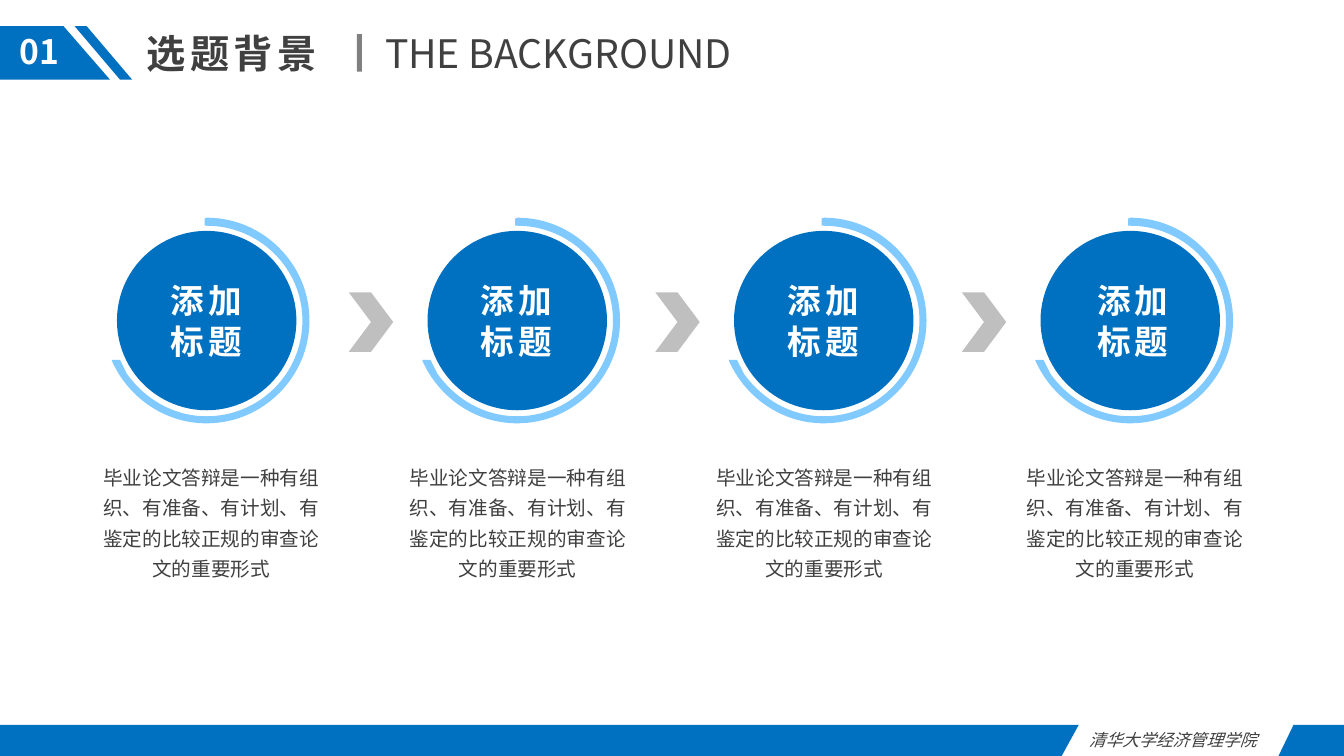
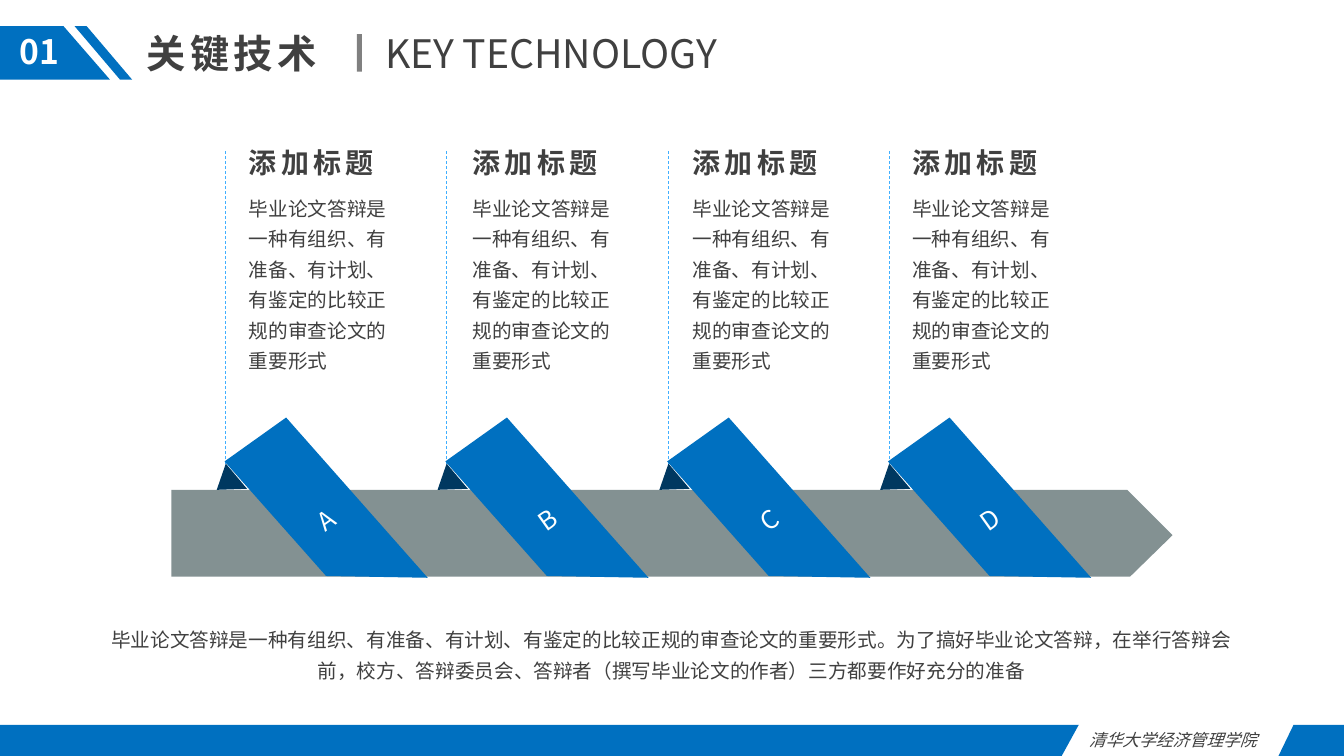
from pptx import Presentation
from pptx.dml.color import RGBColor
from pptx.enum.dml import MSO_LINE
from pptx.enum.shapes import MSO_CONNECTOR, MSO_SHAPE
from pptx.enum.text import MSO_ANCHOR, MSO_AUTO_SIZE, PP_ALIGN
from pptx.oxml.ns import qn
from pptx.util import Emu, Pt

EMU_PER_PX = 9144
WIDTH, HEIGHT = 1333, 750
HEADING_FONT = "Noto Sans CJK SC"
BODY_FONT = "Arial"
COLORS = {
    "blue": "0070C0",
    "navy": "003860",
    "sky": "80CAFF",
    "guide": "40AFFF",
    "text": "404040",
    "divider": "808080",
    "chevron": "BFBFBF",
    "arrow": "839192",
    "white": "FFFFFF",
    "letter": "FEFFFF",
}
RING = [
    (94, 0),
    (150, 0, 196, 46, 196, 102),
    (196, 158, 150, 204, 94, 204),
    (52, 204, 16, 178, 0, 142),
    (0, 141),
    (8, 141),
    (15, 155),
    (33, 180, 61, 197, 94, 197),
    (146, 197, 189, 155, 189, 102),
    (189, 50, 146, 8, 94, 8),
    (92, 8),
    (92, 1),
]
SUMMARY = "毕业论文答辩是一种有组织、有准备、有计划、有鉴定的比较正规的审查论文的重要形式"
CONCLUSION = SUMMARY + "。为了搞好毕业论文答辩，在举行答辩会前，校方、答辩委员会、答辩者（撰写毕业论文的作者）三方都要作好充分的准备"


def px(value):
    return Emu(round(value * EMU_PER_PX))


def rgb(name):
    return RGBColor.from_string(COLORS[name])


def paint(sp, color):
    sp.shadow.inherit = False
    sp.fill.solid()
    sp.fill.fore_color.rgb = rgb(color)
    sp.line.fill.background()
    return sp


def add_preset(slide, kind, x, y, w, h, color):
    sp = slide.shapes.add_shape(kind, px(x), px(y), px(w), px(h))
    return paint(sp, color)


def bend(sp, segments):
    lines = iter(list(sp._element.iter(qn("a:lnTo"))))
    for segment in segments:
        first = next(lines)
        if len(segment) == 6:
            curve = first.makeelement(qn("a:cubicBezTo"), {})
            first.addprevious(curve)
            for line in (first, next(lines), next(lines)):
                curve.append(line[0])
                line.getparent().remove(line)


def add_outline(slide, segments, color, dx=0, dy=0):
    corners = [(px(s[i] + dx), px(s[i + 1] + dy)) for s in segments for i in range(0, len(s), 2)]
    builder = slide.shapes.build_freeform(*corners[0])
    builder.add_line_segments(corners[1:], close=True)
    sp = builder.convert_to_shape()
    bend(sp, segments[1:])
    return paint(sp, color)


def add_run(p, text, size, color="text", font=HEADING_FONT, bold=False, italic=False, spacing=0):
    r = p.add_run()
    r.text = text
    r.font.size = Pt(size)
    r.font.bold = bold
    r.font.italic = italic
    r.font.color.rgb = rgb(color)
    r.font.name = font
    rPr = r.font._element
    ea = rPr.makeelement(qn("a:ea"), {"typeface": HEADING_FONT})
    rPr.find(qn("a:latin")).addnext(ea)
    if spacing:
        rPr.set("spc", str(spacing * 100))


def add_text(slide, x, y, w, h, lines, size, align=PP_ALIGN.LEFT, wrap=True, line_spacing=None, **style):
    tf = slide.shapes.add_textbox(px(x), px(y), px(w), px(h)).text_frame
    tf.word_wrap = wrap
    tf.auto_size = MSO_AUTO_SIZE.SHAPE_TO_FIT_TEXT
    for i, line in enumerate(lines):
        p = tf.add_paragraph() if i else tf.paragraphs[0]
        p.alignment = align
        if line_spacing:
            p.line_spacing = line_spacing
        add_run(p, line, size, **style)


def add_body(slide, x, y, w, h, text, align=PP_ALIGN.LEFT):
    add_text(slide, x, y, w, h, [text], 14, align, line_spacing=1.3, font=BODY_FONT)


def add_guide(slide, x, y1, y2):
    line = slide.shapes.add_connector(MSO_CONNECTOR.STRAIGHT, px(x), px(y1), px(x), px(y2))
    line.line.color.rgb = rgb("guide")
    line.line.width = Pt(0.5)
    line.line.dash_style = MSO_LINE.DASH
    spPr = line._element.spPr
    spPr.append(spPr.makeelement(qn("a:effectLst"), {}))


def add_header(slide, number, title, subtitle, subtitle_width):
    add_text(slide, 136, 24, 196, 57, [title], 28, bold=True, spacing=3)
    add_preset(slide, MSO_SHAPE.RECTANGLE, 354, 34, 5, 37, "divider")
    add_text(slide, 372, 24, subtitle_width, 57, [subtitle], 28, wrap=False)
    add_outline(slide, [(0, 26), (63, 26), (109, 79), (0, 79)], "blue")
    add_outline(slide, [(74, 26), (86, 26), (131, 79), (119, 79)], "blue")
    add_text(slide, 0, 26, 78, 50, [number], 24, PP_ALIGN.CENTER, color="white", bold=True)


def add_footer(slide):
    add_outline(slide, [(0, 719), (1070, 719), (1053, HEIGHT), (0, HEIGHT)], "blue")
    add_text(slide, 1070, 719, 198, 30, ["清华大学经济管理学院"], 12, PP_ALIGN.JUSTIFY, italic=True)
    add_outline(slide, [(1283, 719), (WIDTH, 719), (WIDTH, HEIGHT), (1268, HEIGHT)], "blue")


def add_slide(prs, *header):
    slide = prs.slides.add_slide(prs.slide_layouts[6])
    add_header(slide, *header)
    add_footer(slide)
    return slide


def add_step(slide, circle_x, label_x, body_x):
    add_outline(slide, RING, "sky", circle_x - 5, 216)
    add_preset(slide, MSO_SHAPE.OVAL, circle_x, 229, 178, 178, "blue")
    add_text(slide, label_x, 273, 103, 91, ["添加", "标题"], 24, PP_ALIGN.CENTER,
             color="white", bold=True, spacing=3)
    add_body(slide, body_x, 450, 235, 133, SUMMARY, PP_ALIGN.CENTER)


def add_ribbon(slide, letter, dx):
    add_outline(slide, [(215, 486), (224, 460), (245, 485)], "navy", dx)
    sp = add_outline(slide, [(350, 410), (372, 621), (291, 561), (275, 410)], "blue", dx)
    sp.rotation = 324.5
    tf = sp.text_frame
    tf.vertical_anchor = MSO_ANCHOR.MIDDLE
    p = tf.paragraphs[0]
    p.alignment = PP_ALIGN.CENTER
    add_run(p, letter, 18, color="letter")


def build_background(prs):
    slide = add_slide(prs, "01", "选题背景", "THE BACKGROUND", 385)
    for i in range(3):
        add_preset(slide, MSO_SHAPE.CHEVRON, 346 + 304 * i, 290, 44, 59, "chevron")
    circles = (116, 424, 728, 1032)
    labels = (153, 461, 765, 1072)
    bodies = (92, 396, 700, 1008)
    for columns in zip(circles, labels, bodies):
        add_step(slide, *columns)


def build_technology(prs):
    slide = add_slide(prs, "01", "关键技术", "KEY TECHNOLOGY", 371)
    offsets = [round(658 * i / 3) for i in range(4)]
    for dx in offsets:
        add_guide(slide, 224 + dx, 500, 148)
    add_outline(slide, [(170, 486), (1118, 486), (1163, 531), (1121, 572), (170, 572)], "arrow")
    for letter, dx in zip("ABCD", offsets):
        add_ribbon(slide, letter, dx)
    for x in (237, 459, 677, 895):
        add_body(slide, x, 183, 168, 194, SUMMARY)
        add_text(slide, x, 139, 149, 44, ["添加标题"], 20, wrap=False, bold=True, spacing=3)
    add_body(slide, 95, 611, 1142, 68, CONCLUSION, PP_ALIGN.CENTER)


def main():
    prs = Presentation()
    prs.slide_width = px(WIDTH)
    prs.slide_height = px(HEIGHT)
    build_background(prs)
    build_technology(prs)
    prs.save("out.pptx")


if __name__ == "__main__":
    main()
